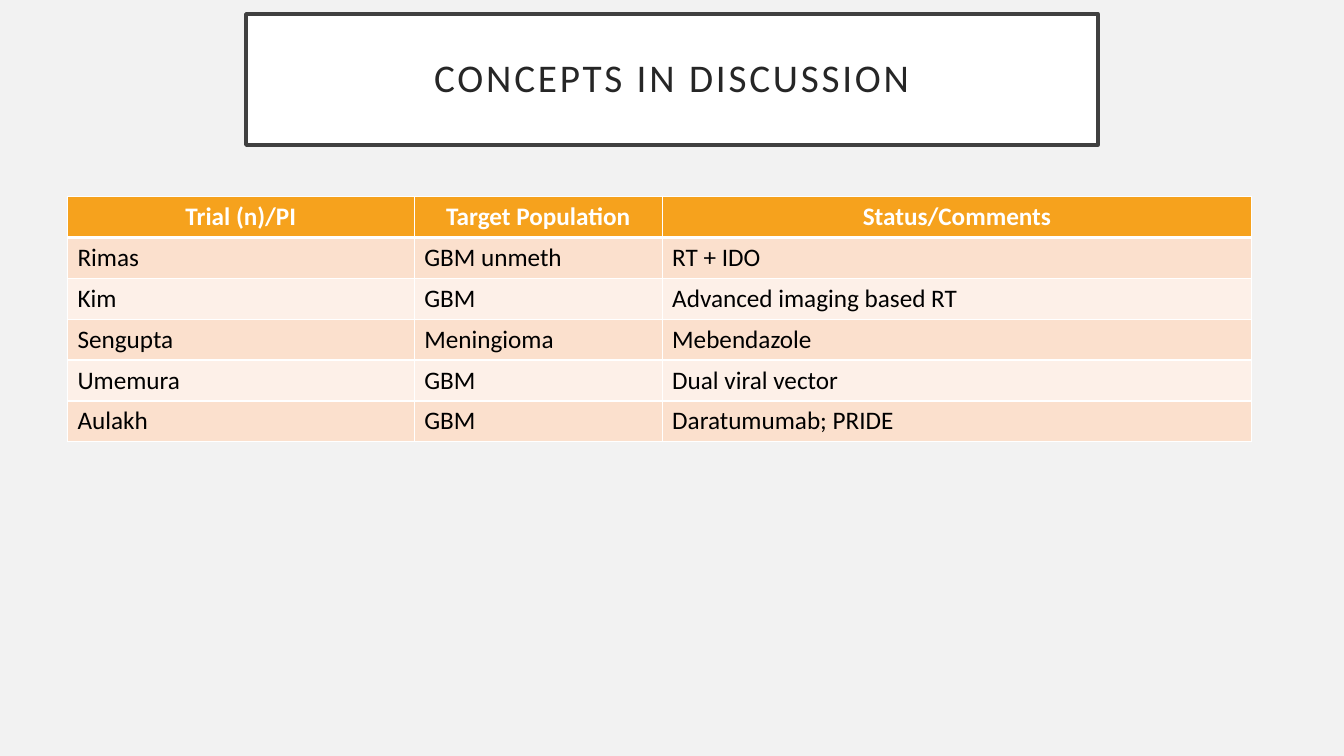
import pptx
import pptx.dml.color
import pptx.enum.shapes
import pptx.enum.text
import pptx.oxml
import pptx.oxml.ns
import pptx.util

Pt = pptx.util.Pt
ALIGN = pptx.enum.text.PP_ALIGN
MIDDLE = pptx.enum.text.MSO_ANCHOR.MIDDLE

TRIALS = [
    ("Trial (n)/PI", "Target Population", "Status/Comments"),
    ("Rimas", "GBM unmeth", "RT + IDO"),
    ("Kim", "GBM", "Advanced imaging based RT"),
    ("Sengupta", "Meningioma", "Mebendazole"),
    ("Umemura", "GBM", "Dual viral vector"),
    ("Aulakh", "GBM", "Daratumumab; PRIDE"),
]


def color(hex_code):
    return pptx.dml.color.RGBColor.from_string(hex_code)


class Deck:
    font = "Calibri"
    white = "FFFFFF"
    header_fill = "F6A21D"
    band_fills = ("FDF0E8", "FBE0CD")

    def __init__(self, width, height):
        self.prs = pptx.Presentation()
        self.prs.slide_width, self.prs.slide_height = Pt(width), Pt(height)

    def new_slide(self, background):
        self.slide = self.prs.slides.add_slide(self.prs.slide_layouts[6])
        self.fill(self.slide.background, background)

    def fill(self, target, hex_code):
        target.fill.solid()
        target.fill.fore_color.rgb = color(hex_code)

    def add_text(self, frame, text, size, hex_code, align, bold=False):
        paragraph = frame.paragraphs[0]
        paragraph.alignment = align
        run = paragraph.add_run()
        run.text = text
        formats = {"name": self.font, "size": Pt(size), "bold": bold}
        for key, value in formats.items():
            setattr(run.font, key, value)
        run.font.color.rgb = color(hex_code)
        return paragraph, run

    def title(self, text, left, top, width, height):
        box = self.slide.shapes.add_shape(
            pptx.enum.shapes.MSO_SHAPE.RECTANGLE,
            Pt(left), Pt(top), Pt(width), Pt(height))
        box.shadow.inherit = False
        self.fill(box, self.white)
        box.line.color.rgb = color("404040")
        box.line.width = Pt(2.5)
        frame = box.text_frame
        formats = {"word_wrap": True, "vertical_anchor": MIDDLE}
        formats.update({f"margin_{side}": Pt(14.4)
                        for side in ("left", "top", "right", "bottom")})
        for key, value in formats.items():
            setattr(frame, key, value)
        paragraph, run = self.add_text(frame, text, 28, "262626", ALIGN.CENTER)
        paragraph.line_spacing = 0.9
        run.font._element.set("spc", "200")

    def borders(self, cell, **widths):
        """Draw white cell borders; widths maps L, R, T, B to points."""
        properties = cell._tc.get_or_add_tcPr()
        for side, width in widths.items():
            properties.append(pptx.oxml.parse_xml(
                f'<a:ln{side} {pptx.oxml.ns.nsdecls("a")} w="{Pt(width)}">'
                f'<a:solidFill><a:srgbClr val="{self.white}"/></a:solidFill>'
                f'</a:ln{side}>'))

    def table(self, rows, left, top, column_widths, row_height):
        table = self.slide.shapes.add_table(
            len(rows), len(column_widths), Pt(left), Pt(top),
            Pt(sum(column_widths)), Pt(row_height * len(rows))).table
        for column, width in zip(table.columns, column_widths):
            column.width = Pt(width)
        for r, texts in enumerate(rows):
            table.rows[r].height = Pt(row_height)
            header = r == 0
            for c, text in enumerate(texts):
                cell = table.cell(r, c)
                self.borders(cell, L=1, R=1, T=3 if r == 1 else 1,
                             B=3 if header else 1)
                self.fill(cell, self.header_fill if header
                          else self.band_fills[r % 2])
                self.add_text(cell.text_frame, text, 18,
                              self.white if header else "000000",
                              ALIGN.CENTER if header else ALIGN.JUSTIFY,
                              header)


def main():
    deck = Deck(960, 540)
    deck.new_slide("F2F2F2")
    deck.title("CONCEPTS IN DISCUSSION", 175.7, 10, 608.6, 93.6)
    deck.table(TRIALS, 48.2, 140.4, (247.7, 177.1, 421.2), 29.2)
    deck.prs.save("out.pptx")


if __name__ == "__main__":
    main()
